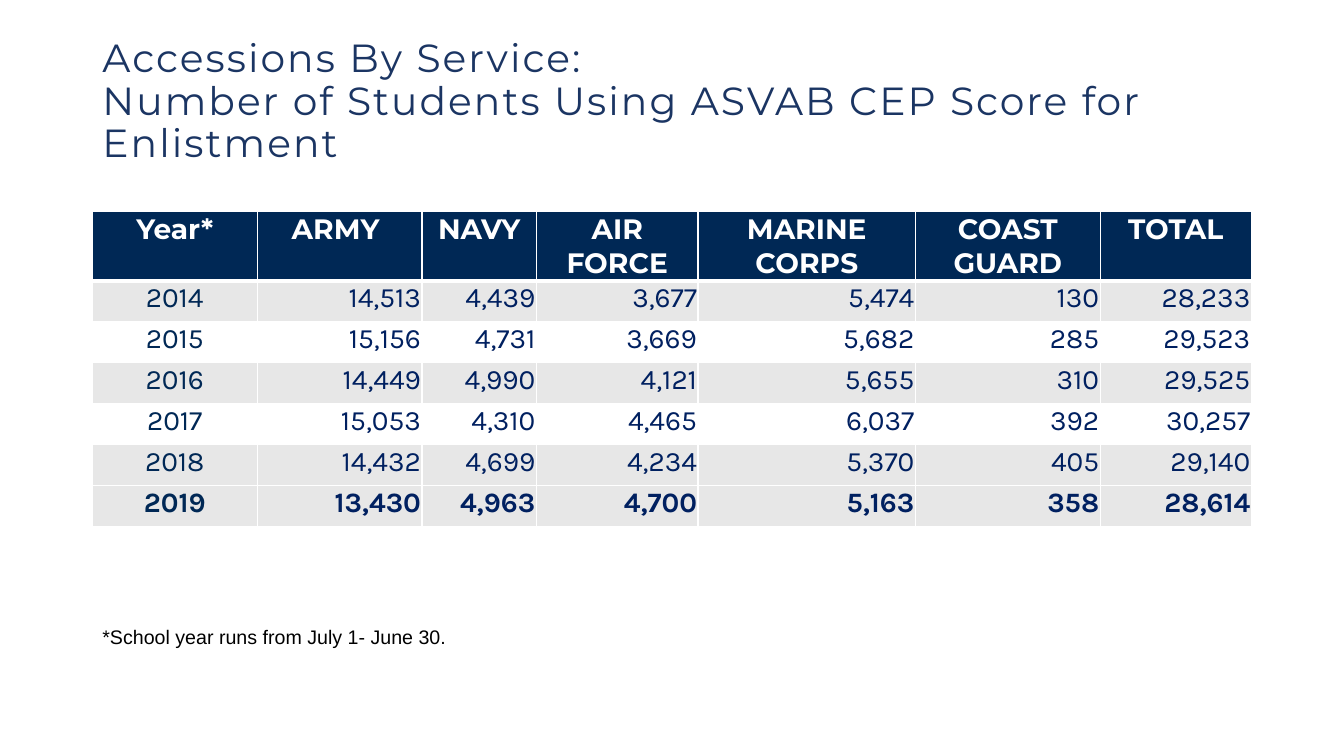
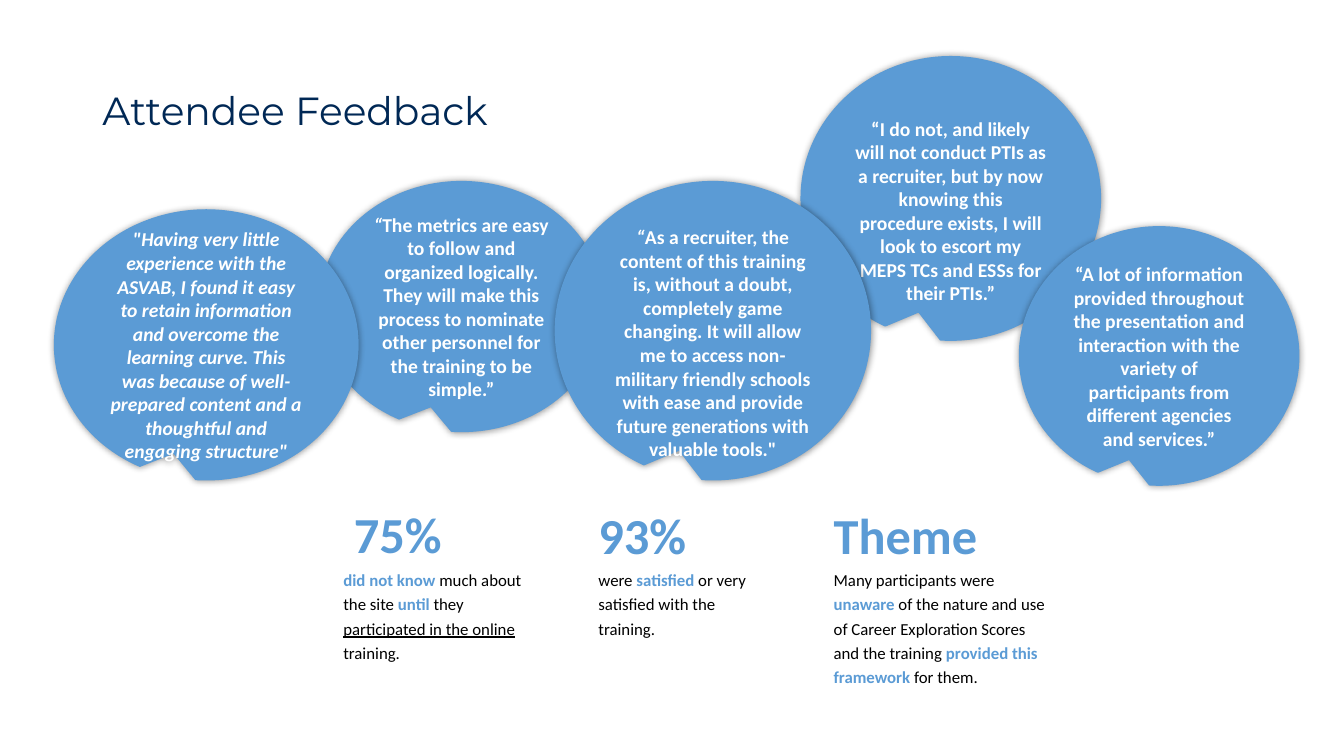
"""Build two slides: yearly accessions by service and attendee feedback."""
from lxml.etree import SubElement
from pptx import Presentation
from pptx.dml.color import RGBColor
from pptx.enum.shapes import MSO_SHAPE as Shape
from pptx.enum.text import MSO_ANCHOR as Anchor, MSO_AUTO_SIZE as AutoSize, PP_ALIGN as Align
from pptx.oxml.ns import qn
from pptx.util import Pt

PX = 9525
NAVY, TITLE_BLUE, FIGURE_BLUE, SKY = "002855", "1B3563", "002060", "5B9BD5"
BLACK, WHITE, BAND_GRAY = "000000", "FFFFFF", "E7E7E7"
rgb = RGBColor.from_string


def style(paragraph, size, font_name, color, bold=False, align=Align.LEFT, spacing=None):
    paragraph.alignment = align
    paragraph.line_spacing = spacing
    font = paragraph.font
    font.size, font.name, font.bold = Pt(size), font_name, bold
    font.color.rgb = rgb(color)


def add_text(slide, box, text="", margin=0):
    frame = slide.shapes.add_textbox(*[n * PX for n in box]).text_frame
    frame.word_wrap = True
    if margin == 0:
        frame.margin_left = frame.margin_right = frame.margin_top = frame.margin_bottom = 0
    frame.text = text
    return frame.paragraphs[0]


deck = Presentation()
deck.slide_width, deck.slide_height = 1280 * PX, 720 * PX

titles = [
    ("Accessions By Service:\vNumber of Students Using ASVAB CEP Score for Enlistment",
     TITLE_BLUE, 1140, 119, 150),
    ("Attendee Feedback", NAVY, 1104, 139, 0),
]
for heading, color, width, height, tracking in titles:
    slide = deck.slides.add_slide(deck.slide_layouts[5])
    title = slide.shapes.title
    title.left, title.top, title.width, title.height = 88 * PX, 38 * PX, width * PX, height * PX
    title.text_frame.text = heading
    title.text_frame.auto_size = AutoSize.NONE
    title.text_frame.vertical_anchor = Anchor.MIDDLE
    title_line = title.text_frame.paragraphs[0]
    style(title_line, 28, "Montserrat", color, spacing=0.9)
    for run in title_line.runs:
        run.font._element.set("spc", str(tracking)) if hasattr(run.font, "_element") else \
            run._r.get_or_add_rPr().set("spc", str(tracking))
accessions, feedback = deck.slides

rows = [
    ("Year*", "ARMY ", "NAVY", "AIR FORCE", "MARINE CORPS", "COAST GUARD", "TOTAL"),
    ("2014", "14,513", "4,439", "3,677", "5,474", "130", "28,233"),
    ("2015", "15,156", "4,731", "3,669", "5,682", "285", "29,523"),
    ("2016", "14,449", "4,990", "4,121", "5,655", "310", "29,525"),
    ("2017", "15,053", "4,310", "4,465", "6,037", "392", "30,257"),
    ("2018", "14,432", "4,699", "4,234", "5,370", "405", "29,140"),
    ("2019", "13,430", "4,963", "4,700", "5,163", "358", "28,614"),
]
column_widths = [157, 157, 109, 154, 207, 176, 144]
table = accessions.shapes.add_table(
    len(rows), len(column_widths), 88 * PX, 201 * PX, sum(column_widths) * PX, 300 * PX).table
for column, width in zip(table.columns, column_widths):
    column.width = width * PX
for r, values in enumerate(rows):
    is_header, is_latest = r == 0, r == len(rows) - 1
    table.rows[r].height = (66 if is_header else 39) * PX
    for c, value in enumerate(values):
        cell = table.cell(r, c)
        cell.margin_left = cell.margin_right = cell.margin_top = PX
        cell.margin_bottom = 0
        for side in ("a:lnL", "a:lnR", "a:lnT", "a:lnB"):
            weight = 3 if is_header and side == "a:lnB" else 1
            border = SubElement(cell._tc.get_or_add_tcPr(), qn(side), w=str(Pt(weight)))
            SubElement(SubElement(border, qn("a:solidFill")), qn("a:srgbClr"), val=WHITE)
        cell.fill.solid()
        cell.fill.fore_color.rgb = rgb(
            NAVY if is_header else BAND_GRAY if r % 2 or is_latest else WHITE)
        cell.text = value
        entry = cell.text_frame.paragraphs[0]
        if is_header:
            style(entry, 20, "Montserrat", WHITE, True, Align.CENTER)
        elif c == 0:
            style(entry, 20, "Karla", NAVY, is_latest, Align.CENTER)
        else:
            style(entry, 20, "Karla", FIGURE_BLUE, is_latest, Align.RIGHT)

footnote = add_text(accessions, (88, 590, 700, 61),
                    "*School year runs from July 1- June 30.", margin=None)
style(footnote, 14, "Arial", BLACK)

quotes = [
    ((304, 173, 271, 238), 5, "“",
     "The metrics are easy to follow and organized logically. They will make this process "
     "to nominate other personnel for the training to be simple.”"),
    ((763, 54, 285, 270), 28, "",
     "“I do not, and likely will not conduct PTIs as a recruiter, but by now knowing this "
     "procedure exists, I will look to escort my MEPS TCs and ESSs for their PTIs.”"),
    ((971, 216, 266, 246), 5, "",
     "“A lot of information provided throughout the presentation and interaction with the "
     "variety of participants from different agencies and services.”"),
    ((529, 173, 300, 284), 28, "“",
     "As a recruiter, the content of this training is, without a doubt, completely game "
     "changing. It will allow me to access non-military friendly schools with ease and "
     'provide future generations with valuable tools."'),
    ((52, 200, 289, 257), 5,
     '"Having very little experience with the ASVAB, I found it easy to retain information '
     "and overcome the learning curve. This was because of well-prepared content and a "
     'thoughtful and engaging structure"', ""),
]
for box, top_margin, italic_part, upright_part in quotes:
    bubble = feedback.shapes.add_shape(Shape.OVAL_CALLOUT, *[n * PX for n in box])
    bubble.adjustments[0], bubble.adjustments[1] = -0.107, 0.4
    bubble.fill.solid()
    bubble.fill.fore_color.rgb = bubble.line.color.rgb = rgb(SKY)
    bubble.line.width = Pt(1)
    bubble.shadow.inherit = False
    effects = bubble._element.spPr.find(qn("a:effectLst"))
    glow = SubElement(effects, qn("a:outerShdw"), blurRad=str(Pt(5)), dist="0", dir="0",
                      algn="ctr", rotWithShape="0")
    SubElement(SubElement(glow, qn("a:srgbClr"), val=BLACK), qn("a:alpha"), val="40000")
    bubble.text_frame.word_wrap = True
    bubble.text_frame.vertical_anchor = Anchor.MIDDLE
    bubble.text_frame.margin_top = top_margin * PX
    quote = bubble.text_frame.paragraphs[0]
    style(quote, 14, "Calibri", WHITE, True, Align.CENTER)
    for part, italic in ((italic_part, True), (upright_part, False)):
        if part:
            run = quote.add_run()
            run.text, run.font.italic = part, italic

findings = [
    ("75%", (337, 468, 172, 70), (327, 539, 181, 93),
     [("did not know ", "strong"), ("much about the site ", ""), ("until", "strong"),
      (" they ", ""), ("participated in the online ", "underline"), ("training.", "")]),
    ("93%", (570, 469, 172, 70), (570, 539, 162, 70),
     [("were ", ""), ("satisfied", "strong"), (" or very satisfied with the training.", "")]),
    ("Theme", (794, 469, 204, 70), (794, 539, 204, 116),
     [("Many participants were ", ""), ("unaware", "strong"),
      (" of the nature and use of Career Exploration Scores and the training", ""),
      (" provided this framework ", "strong"), ("for them.", "")]),
]
for headline, headline_box, detail_box, parts in findings:
    style(add_text(feedback, headline_box, headline), 36, "Calibri", SKY, True, spacing=1.2)
    detail = add_text(feedback, detail_box)
    style(detail, 12, "Calibri", BLACK, spacing=1.2)
    for part, emphasis in parts:
        run = detail.add_run()
        run.text = part
        if emphasis == "strong":
            run.font.bold = True
            run.font.color.rgb = rgb(SKY)
        elif emphasis == "underline":
            run.font.underline = True

deck.save("out.pptx")
